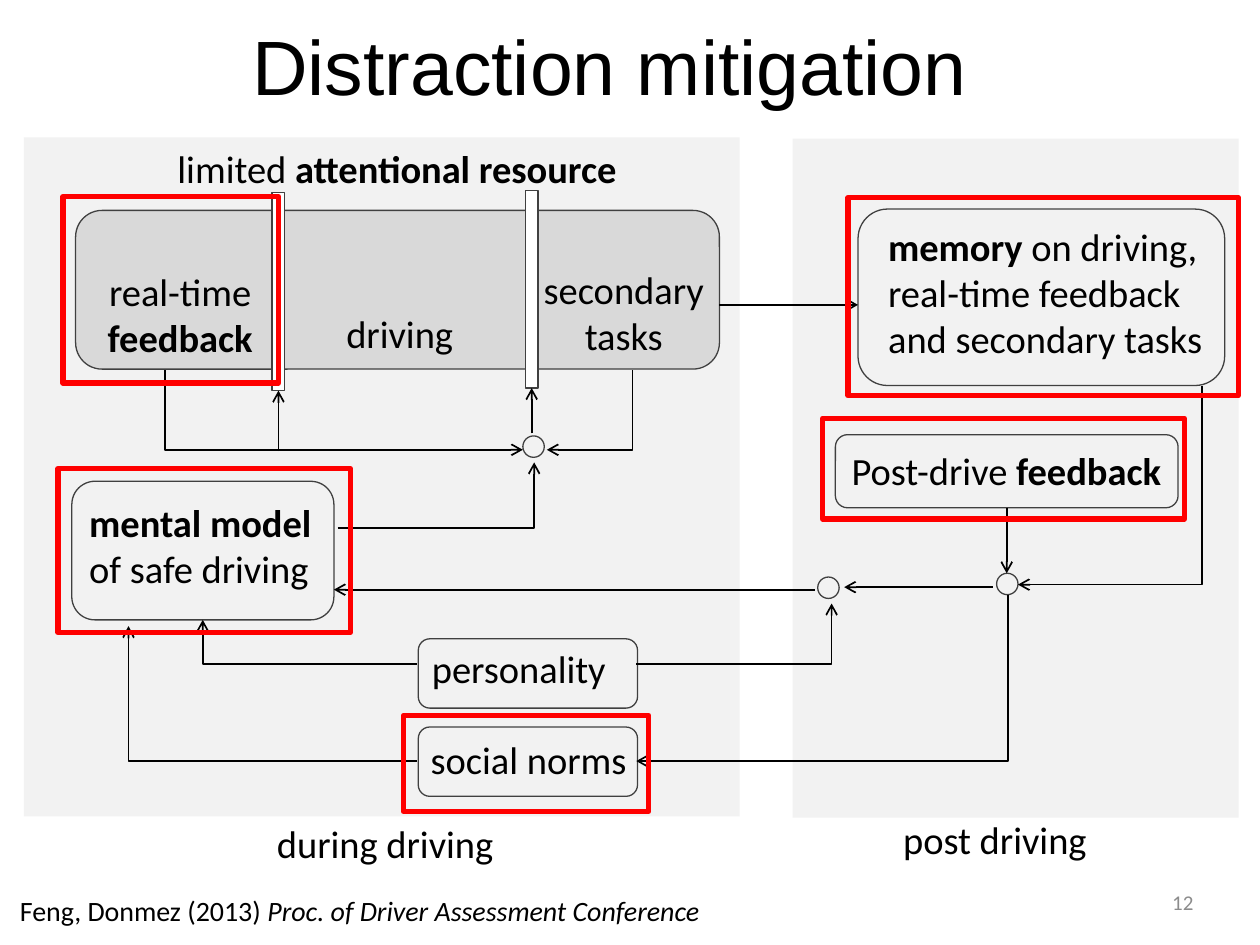
"""Build a slide with a flow chart on distraction mitigation."""
from pptx import Presentation
from pptx.dml.color import RGBColor as Rgb
from pptx.enum.shapes import MSO_CONNECTOR as Link, MSO_SHAPE as Form
from pptx.enum.text import MSO_ANCHOR as Anchor, PP_ALIGN as Align
from pptx.oxml.ns import qn
from pptx.util import Inches, Pt
from lxml.etree import SubElement as Sub

HUES = {"panel": "F2F2F2", "group": "D9D9D9", "white": "FFFFFF", "edge": "404040",
        "black": "000000", "grey": "8C8C8C", "red": "FF0000"}

deck = Presentation()
deck.slide_width, deck.slide_height = Inches(10), Inches(7.5)
slide = deck.slides.add_slide(deck.slide_layouts[6])
shapes = slide.shapes


def hue(name):
    return Rgb.from_string(HUES[name])


def box(form, at, fill="panel", edge="edge", width=0.75):
    shape = shapes.add_shape(form, *map(Inches, at))
    shape.shadow.inherit = False
    if fill:
        shape.fill.solid()
        shape.fill.fore_color.rgb = hue(fill)
    else:
        shape.fill.background()
    if edge:
        shape.line.color.rgb = hue(edge)
        shape.line.width = Pt(width)
    else:
        shape.line.fill.background()
    return shape


def text(at, runs, align=Align.LEFT, size=22, font="Calibri", color="black",
         anchor=Anchor.TOP):
    frame = shapes.add_textbox(*map(Inches, at)).text_frame
    frame.word_wrap = True
    frame.vertical_anchor = anchor
    para = frame.paragraphs[0]
    para.alignment = align
    for words, style in runs:
        run = para.add_run()
        run.text = words
        run.font.size = Pt(size)
        run.font.name = font
        run.font.color.rgb = hue(color)
        run.font.bold = style == "b"
        run.font.italic = style == "i"


text((8.67, 7.04, 0.9, 0.24), [("12", "")], Align.RIGHT, 12, color="grey",
     anchor=Anchor.MIDDLE)
text((0.34, -0.11, 9, 1.25), [("Distraction mitigation", "")], Align.CENTER, 44, "Arial",
     anchor=Anchor.MIDDLE)

for at in [(6.29, 1.1, 3.54, 5.39), (0.19, 1.09, 5.68, 5.39)]:
    box(Form.RECTANGLE, at, edge=None)

box(Form.ROUNDED_RECTANGLE, (0.6, 1.67, 5.11, 1.26), "group")
bars = [box(Form.RECTANGLE, (x, y, 0.1, 1.57), "white")
        for x, y in [(2.16, 1.53), (4.17, 1.51)]]
for at in [(0.57, 3.82, 2.08, 1.1), (3.32, 5.07, 1.74, 0.55),
           (3.32, 5.77, 1.74, 0.55), (6.81, 1.66, 2.91, 1.4)]:
    box(Form.ROUNDED_RECTANGLE, at)
review = box(Form.ROUNDED_RECTANGLE, (6.63, 3.45, 2.72, 0.58))
for x, y in [(7.91, 4.55), (6.49, 4.58), (4.15, 3.46)]:
    box(Form.OVAL, (x, y, 0.17, 0.17))

text((4.19, 2.06, 1.52, 0.84), [("secondary tasks", "")], Align.CENTER)
text((0.6, 2.08, 1.66, 0.84), [("real-time ", ""), ("feedback", "b")], Align.CENTER)
for at, runs in [
    ((6.95, 1.72, 2.99, 1.21),
     [("memory", "b"), (" on driving, real-time feedback and secondary tasks", "")]),
    ((6.66, 3.5, 3.72, 0.47), [("Post-drive ", ""), ("feedback", "b")]),
    ((1.31, 1.1, 4.05, 0.47), [("limited ", ""), ("attentional resource", "b")]),
    ((2.65, 2.41, 1.37, 0.47), [("driving", "")]),
    ((0.61, 3.91, 2.26, 0.84), [("mental model ", "b"), ("of safe driving", "")]),
    ((3.33, 5.07, 2.04, 0.47), [("personality", "")]),
    ((3.32, 5.79, 2.04, 0.47), [("social norms", "")]),
    ((2.1, 6.46, 2.04, 0.47), [("during driving", "")]),
    ((7.07, 6.43, 2.04, 0.47), [("post driving", "")]),
]:
    text(at, runs)
text((0.06, 7.04, 8.58, 0.37),
     [("Feng, Donmez (2013) ", ""), ("Proc. of Driver Assessment Conference", "i")], size=16)

ACROSS, DOWN = 100000, 0
lines = []
for ends, bend in [
    ((7.99, 4.03, 7.99, 4.55), None),
    ((4.22, 3.44, 4.22, 3.08), None),
    ((2.21, 3.58, 2.21, 3.1), None),
    ((5.71, 2.42, 6.81, 2.42), None),
    ((7.88, 4.66, 6.7, 4.66), None),
    ((6.47, 4.68, 2.65, 4.68), None),
    ((9.54, 3.06, 8.08, 4.64), DOWN),
    ((5.02, 2.94, 4.34, 3.57), DOWN),
    ((1.31, 2.94, 4.15, 3.57), DOWN),
    ((8, 4.72, 5.05, 6.04), DOWN),
    ((2.68, 4.19, 4.24, 3.67), ACROSS),
    ((3.31, 6.04, 1.02, 4.97), ACROSS),
    ((3.31, 5.27, 1.61, 4.92), ACROSS),
    ((5.05, 5.27, 6.6, 4.79), ACROSS),
]:
    kind = Link.STRAIGHT if bend is None else Link.ELBOW
    line = shapes.add_connector(kind, *map(Inches, ends))
    line.line.color.rgb = hue("black")
    line.line.width = Pt(1)
    props = line._element.spPr
    Sub(props.find(qn("a:ln")), qn("a:tailEnd"), type="arrow")
    Sub(props, qn("a:effectLst"))
    if bend is not None:
        guides = props.find(qn("a:prstGeom")).find(qn("a:avLst"))
        Sub(guides, qn("a:gd"), name="adj1", fmla=f"val {bend}")
    lines.append(line)
lines[0].begin_connect(review, 2)
lines[1].end_connect(bars[1], 2)
lines[2].end_connect(bars[0], 2)

for at in [(0.5, 1.56, 1.71, 1.48), (6.53, 3.32, 2.87, 0.8), (0.46, 3.72, 2.32, 1.3),
           (3.2, 5.68, 1.95, 0.76), (6.73, 1.57, 3.1, 1.57)]:
    box(Form.RECTANGLE, at, None, "red", 3)

deck.save("out.pptx")
